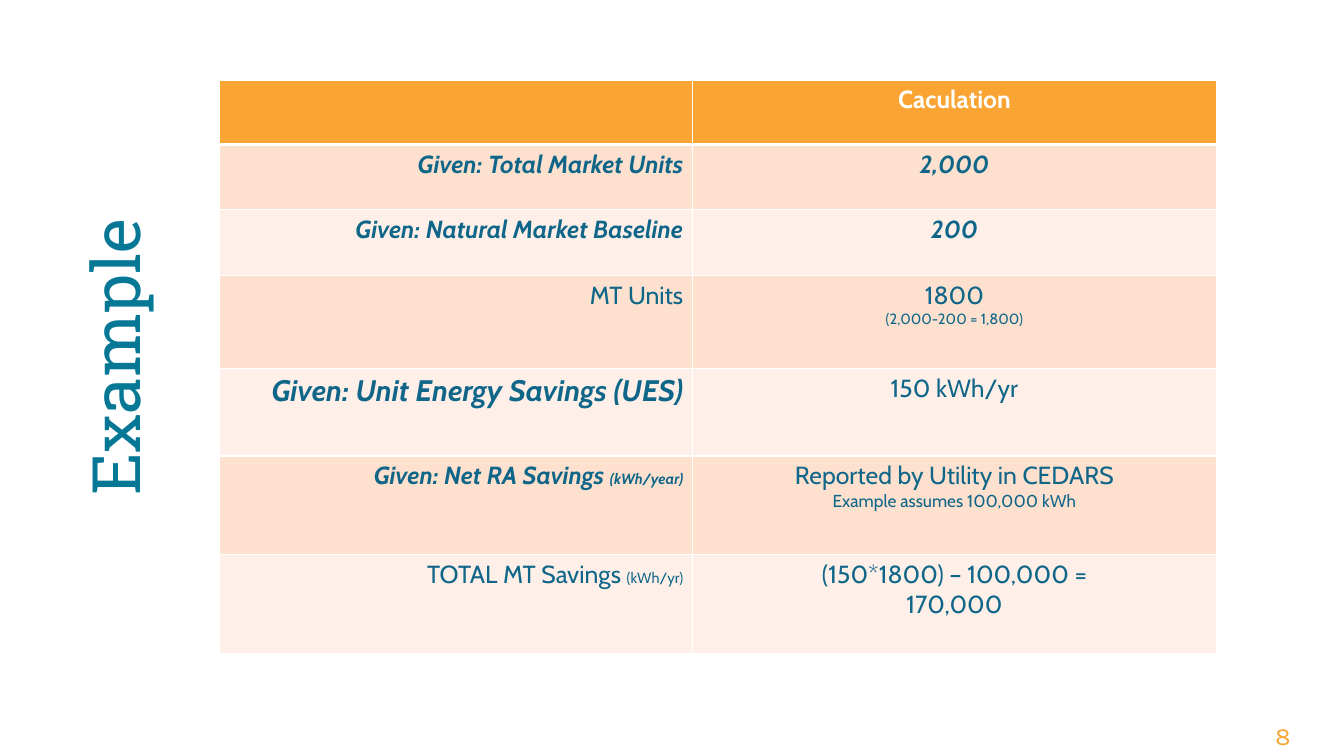
from lxml import etree
from pptx import Presentation
from pptx.dml.color import RGBColor
from pptx.enum.text import MSO_ANCHOR, PP_ALIGN
from pptx.oxml.ns import qn
from pptx.util import Pt

LEFT, CENTER, RIGHT = PP_ALIGN.LEFT, PP_ALIGN.CENTER, PP_ALIGN.RIGHT
TOP = MSO_ANCHOR.TOP

COLORS = {
    "title": "077796",
    "text": "0F6689",
    "accent": "F9A433",
    "white": "FFFFFF",
    "dark band": "FDE0CE",
    "light band": "FEF0E8",
}

COLUMN_WIDTHS = [382.3, 424.8]
ROW_HEIGHTS = [52.4, 52.6, 53.5, 75.4, 70.5, 80, 80]

# Each cell: (emphasised, paragraphs), each paragraph a list of (words, size)
ROWS = [
    [(True, []),
     (True, [[("Caculation", 20)]])],
    [(True, [[("Given: Total Market Units", 20)]]),
     (True, [[("2,000", 20)]])],
    [(True, [[("Given: Natural Market Baseline", 20)]]),
     (True, [[("200", 20)]])],
    [(False, [[("MT Units", 20)]]),
     (False, [[("1800", 20)], [("(2,000-200 = 1,800)", 12)]])],
    [(True, [[("Given: Unit Energy Savings (UES)", 24)]]),
     (False, [[("150 kWh/yr", 20)]])],
    [(True, [[("Given: Net RA Savings ", 20), ("(kWh/year)", 12)]]),
     (False, [[("Reported by Utility in CEDARS", 20)],
              [("Example assumes 100,000 kWh", 14)]])],
    [(False, [[("TOTAL MT Savings ", 20), ("(kWh/yr)", 12)]]),
     (False, [[("(150*1800) – 100,000 =", 20)], [("170,000", 20)]])],
]


def color(name):
    return RGBColor.from_string(COLORS[name])


def style(span, font, size, color_name, bold=False, italic=False):
    span.font.name = font
    span.font.size = Pt(size)
    span.font.color.rgb = color(color_name)
    span.font.bold = bold
    span.font.italic = italic


def set_borders(cell, top, bottom):
    properties = cell._tc.get_or_add_tcPr()
    for side, width in (("L", 1), ("R", 1), ("T", top), ("B", bottom)):
        line = etree.SubElement(properties, qn(f"a:ln{side}"), w=str(Pt(width)))
        fill = etree.SubElement(line, qn("a:solidFill"))
        etree.SubElement(fill, qn("a:srgbClr"), val=COLORS["white"])


def fill_cell(cell, row, column, emphasised, paragraphs):
    header = row == 0
    set_borders(cell, top=3 if row == 1 else 1, bottom=3 if header else 1)
    band = "accent" if header else "dark band" if row % 2 else "light band"
    cell.fill.solid()
    cell.fill.fore_color.rgb = color(band)
    cell.vertical_anchor = TOP
    frame = cell.text_frame
    for index, spans in enumerate(paragraphs):
        para = frame.add_paragraph() if index else frame.paragraphs[0]
        para.alignment = CENTER if column else RIGHT
        for words, size in spans:
            span = para.add_run()
            span.text = words
            style(span, "Cabin", size, "white" if header else "text",
                  bold=emphasised, italic=emphasised and not header)


def add_calculation_table(page):
    frame = page.shapes.add_table(
        len(ROWS), len(COLUMN_WIDTHS), Pt(178), Pt(64.8),
        Pt(sum(COLUMN_WIDTHS)), Pt(sum(ROW_HEIGHTS)))
    table = frame.table
    for column, width in zip(table.columns, COLUMN_WIDTHS):
        column.width = Pt(width)
    for row, height in zip(table.rows, ROW_HEIGHTS):
        row.height = Pt(height)
    for row, cells in enumerate(ROWS):
        for column, (emphasised, paragraphs) in enumerate(cells):
            fill_cell(table.cell(row, column), row, column,
                      emphasised, paragraphs)


def set_side_title(page, words):
    title = page.shapes.title
    title.left, title.top = Pt(-383), Pt(-10)
    title.width, title.height = Pt(979), Pt(102)
    title.rotation = 270
    frame = title.text_frame
    frame.text = words
    frame.word_wrap = True
    frame.vertical_anchor = TOP
    frame.margin_left = frame.margin_right = Pt(8)
    frame.margin_top = frame.margin_bottom = Pt(4)
    para = frame.paragraphs[0]
    para.alignment = LEFT
    para.line_spacing = 1.0
    para._p.get_or_add_pPr().set("marL", str(Pt(121)))
    style(para.runs[0], "Roboto Slab", 54, "title")


def add_page_number(page, number):
    box = page.shapes.add_textbox(Pt(994.3), Pt(579.6), Pt(57.6), Pt(32.4))
    frame = box.text_frame
    frame.word_wrap = True
    frame.text = number
    para = frame.paragraphs[0]
    para.alignment = RIGHT
    style(para.runs[0], "Karla", 20, "accent")


def main():
    deck = Presentation()
    deck.slide_width, deck.slide_height = Pt(1088), Pt(612)
    page = deck.slides.add_slide(deck.slide_layouts[5])
    page.background.fill.solid()
    page.background.fill.fore_color.rgb = color("white")

    # Title, running up the left side
    set_side_title(page, "Example")

    # Worked calculation
    add_calculation_table(page)

    # Footer
    add_page_number(page, "8")

    deck.save("out.pptx")


if __name__ == "__main__":
    main()
